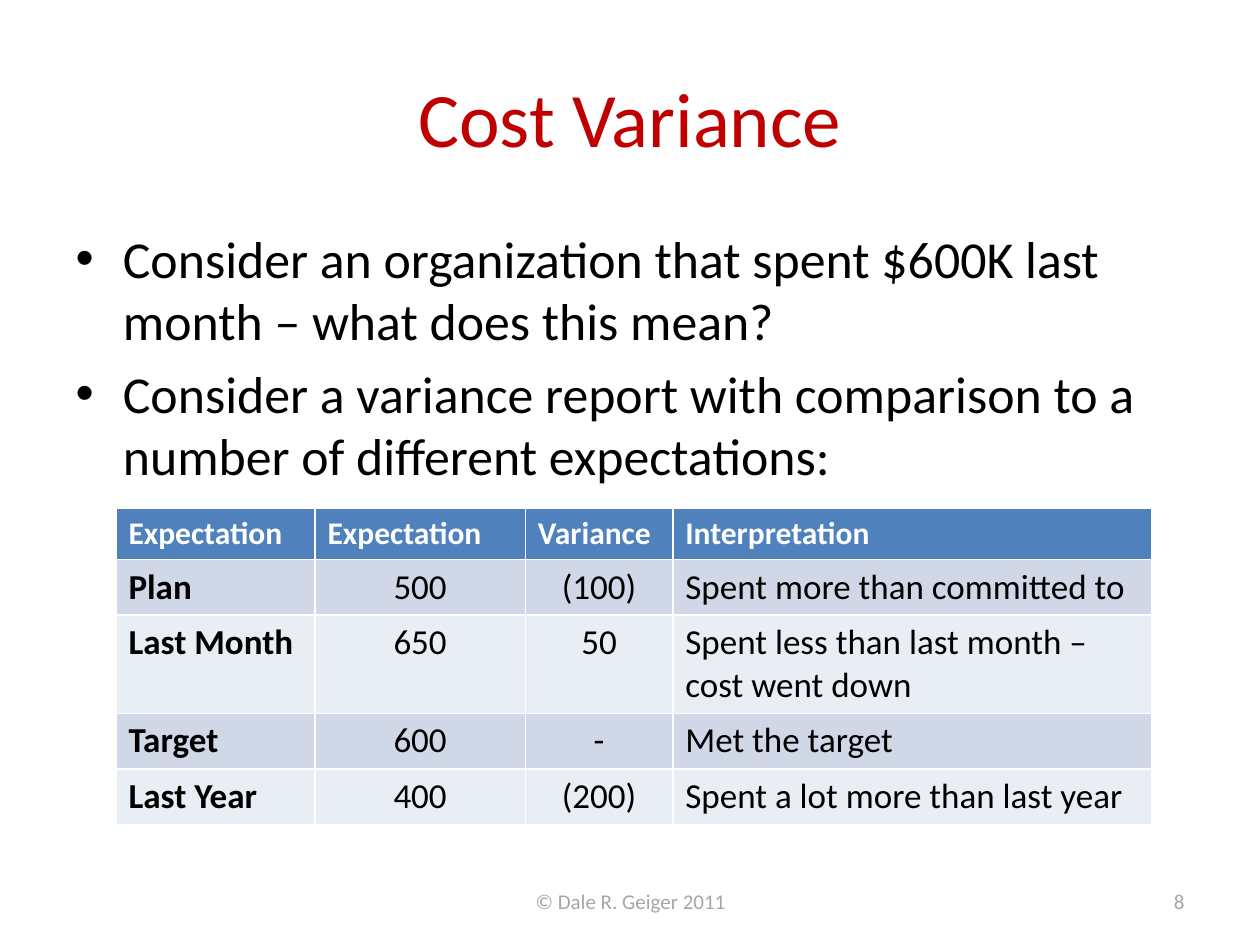
"""Build the Cost Variance slide: a title, two bullets, a variance table and a footer."""
from dataclasses import dataclass

from pptx import Presentation
from pptx.dml.color import RGBColor
from pptx.enum.text import MSO_ANCHOR, MSO_AUTO_SIZE, PP_ALIGN
from pptx.slide import Slide
from pptx.text.text import TextFrame
from pptx.util import Pt

LEFT, CENTER, RIGHT = PP_ALIGN.LEFT, PP_ALIGN.CENTER, PP_ALIGN.RIGHT
MIDDLE = MSO_ANCHOR.MIDDLE
NO_AUTOFIT = MSO_AUTO_SIZE.NONE
EMU_PER_PX = 9144


@dataclass(frozen=True)
class Theme:
    font: str = "Calibri"
    title: str = "C00000"
    text: str = "000000"
    footer: str = "A6A6A6"
    header_text: str = "FFFFFF"
    header_fill: str = "4F81BD"
    bands: tuple[str, str] = ("D0D8E8", "E9EDF4")
    title_size: float = 44
    body_size: float = 29.6
    header_size: float = 18
    cell_size: float = 20
    footer_size: float = 12


@dataclass(frozen=True)
class Box:
    left: int
    top: int
    width: int
    height: int

    def emu(self) -> tuple[int, int, int, int]:
        return px(self.left), px(self.top), px(self.width), px(self.height)


@dataclass(frozen=True)
class FooterItem:
    text: str
    box: Box
    align: PP_ALIGN


@dataclass(frozen=True)
class Comparison:
    basis: str
    expected: str
    variance: str
    interpretation: str

    def texts(self) -> tuple[str, str, str, str]:
        return self.basis, self.expected, self.variance, self.interpretation


THEME = Theme()
TITLE_BOX = Box(50, 30, 900, 125)
BODY_BOX = Box(50, 175, 900, 208)
TABLE_BOX = Box(92, 403, 822, 205)
COLUMN_WIDTHS = (158, 167, 117, 380)
COLUMN_ALIGNS = (LEFT, CENTER, CENTER, LEFT)

BULLETS = (
    "Consider an organization that spent $600K last month – what does this mean?",
    "Consider a variance report with comparison to a number of different expectations:",
)
HEADER = Comparison("Expectation", "Expectation", "Variance", "Interpretation")
COMPARISONS = (
    Comparison("Plan", "500", "(100)", "Spent more than committed to"),
    Comparison("Last Month", "650", "50", "Spent less than last month – cost went down"),
    Comparison("Target", "600", "-", "Met the target"),
    Comparison("Last Year", "400", "(200)", "Spent a lot more than last year"),
)
FOOTER = (
    FooterItem("© Dale R. Geiger 2011", Box(342, 695, 317, 40), CENTER),
    FooterItem("8", Box(717, 695, 233, 40), RIGHT),
)


def px(length: int) -> int:
    return length * EMU_PER_PX


def write(frame: TextFrame, text: str, size: float, color: str,
          align: PP_ALIGN = LEFT, bold: bool = False) -> None:
    frame.text = text
    for paragraph in frame.paragraphs:
        paragraph.alignment = align
        for run in paragraph.runs:
            run.font.name = THEME.font
            run.font.size = Pt(size)
            run.font.bold = bold
            run.font.color.rgb = RGBColor.from_string(color)


def fill_placeholder(slide: Slide, index: int, box: Box, text: str,
                     size: float, color: str, align: PP_ALIGN) -> None:
    placeholder = slide.placeholders[index]
    placeholder.left, placeholder.top, placeholder.width, placeholder.height = box.emu()
    placeholder.text_frame.auto_size = NO_AUTOFIT
    write(placeholder.text_frame, text, size, color, align)


def draw_table(slide: Slide) -> None:
    rows = (HEADER, *COMPARISONS)
    table = slide.shapes.add_table(len(rows), len(COLUMN_WIDTHS), *TABLE_BOX.emu()).table
    table.first_col = True
    for column, width in zip(table.columns, COLUMN_WIDTHS):
        column.width = px(width)
    for row_index, comparison in enumerate(rows):
        is_header = row_index == 0
        fill = THEME.header_fill if is_header else THEME.bands[(row_index - 1) % 2]
        size = THEME.header_size if is_header else THEME.cell_size
        color = THEME.header_text if is_header else THEME.text
        for column_index, text in enumerate(comparison.texts()):
            cell = table.cell(row_index, column_index)
            cell.fill.solid()
            cell.fill.fore_color.rgb = RGBColor.from_string(fill)
            align = LEFT if is_header else COLUMN_ALIGNS[column_index]
            write(cell.text_frame, text, size, color, align, is_header or column_index == 0)


def draw_footer(slide: Slide, item: FooterItem) -> None:
    frame = slide.shapes.add_textbox(*item.box.emu()).text_frame
    frame.word_wrap = True
    frame.vertical_anchor = MIDDLE
    write(frame, item.text, THEME.footer_size, THEME.footer, item.align)


def main() -> None:
    presentation = Presentation()
    presentation.slide_width, presentation.slide_height = px(1000), px(750)
    slide = presentation.slides.add_slide(presentation.slide_layouts[1])
    fill_placeholder(slide, 0, TITLE_BOX, "Cost Variance",
                     THEME.title_size, THEME.title, CENTER)
    fill_placeholder(slide, 1, BODY_BOX, "\n".join(BULLETS),
                     THEME.body_size, THEME.text, LEFT)
    draw_table(slide)
    for item in FOOTER:
        draw_footer(slide, item)
    presentation.save("out.pptx")


if __name__ == "__main__":
    main()
